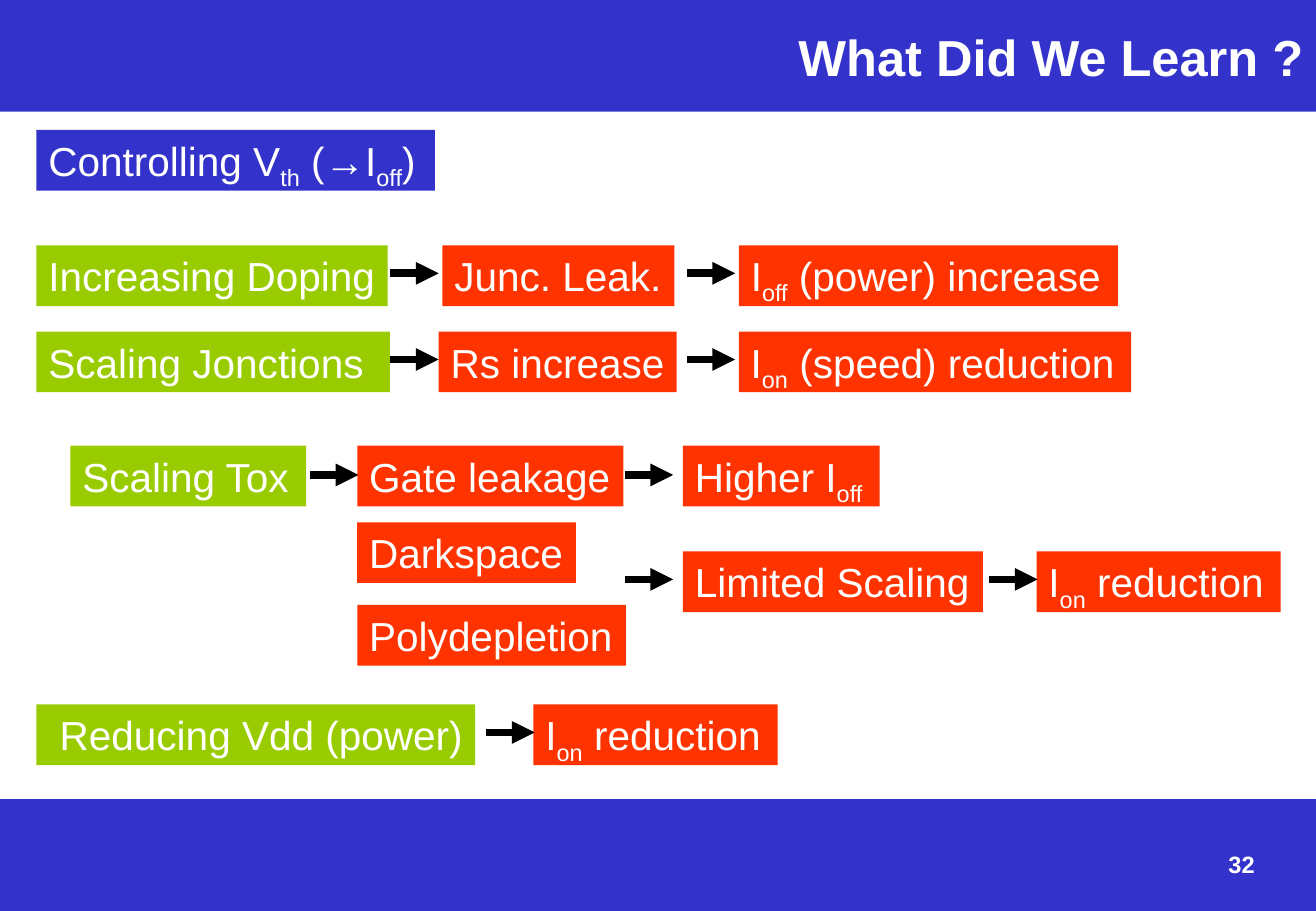
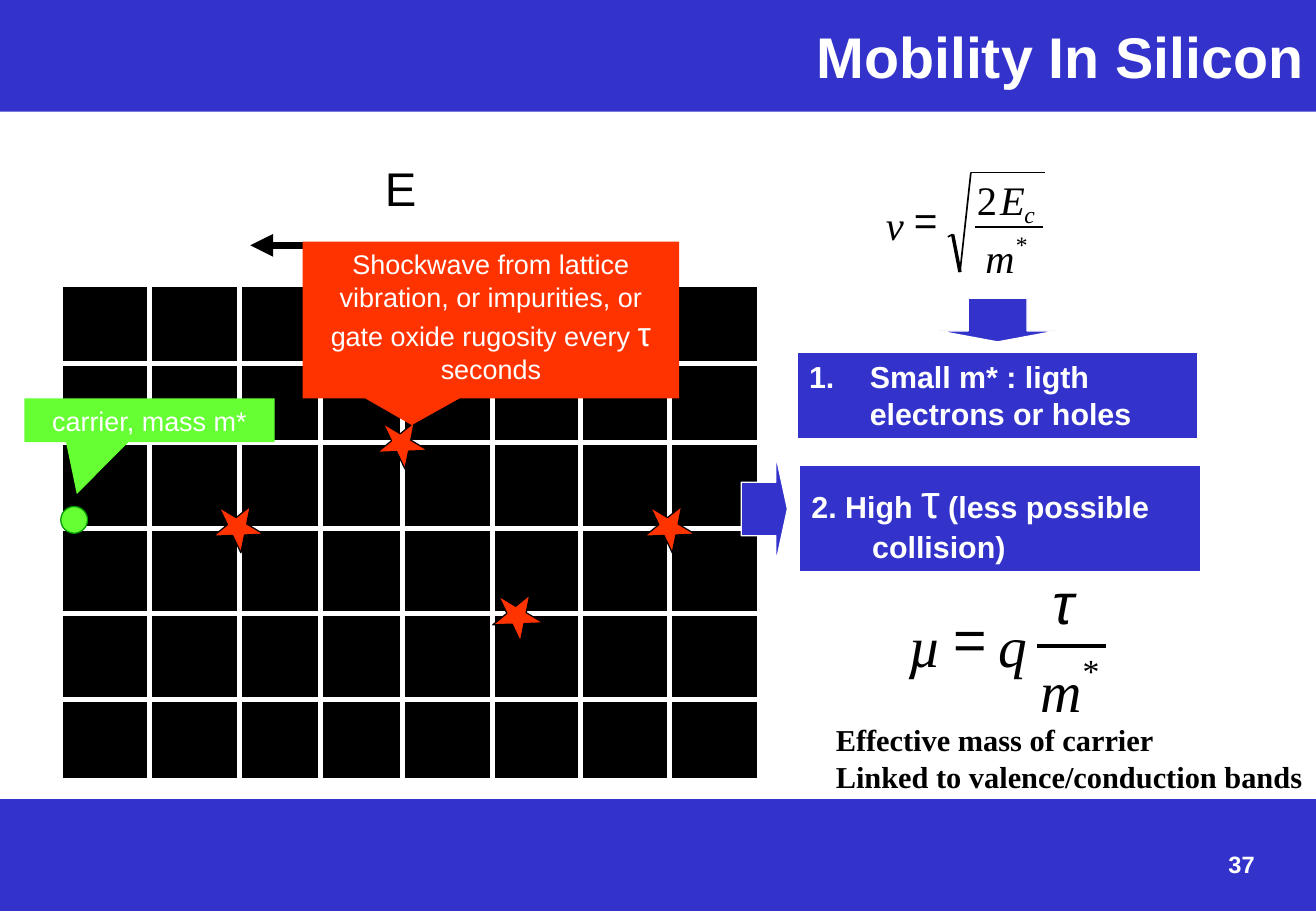
from pptx import Presentation
from pptx.dml.color import RGBColor
from pptx.enum.shapes import MSO_CONNECTOR, MSO_SHAPE
from pptx.enum.text import MSO_ANCHOR, MSO_AUTO_SIZE, PP_ALIGN
from pptx.oxml.ns import qn
from pptx.util import Emu, Pt
from lxml.etree import SubElement

PX = 9144  # 100 px to the inch
WIDE, HIGH, BAND = 1083, 750, 92
COLS = {
    "blue": "3333CC", "green": "99CC00", "red": "FF3300", "lime": "66FF33",
    "edge": "009900", "white": "FFFFFF", "black": "000000",
}
SANS, SERIF = "Arial", "Times New Roman"
PAD = (10, 5, 0, 5)
EVEN = (10, 5, 10, 5)


# Basic tools
def px(*nums):
    return [Emu(num * PX) for num in nums]


def tint(name):
    return RGBColor.from_string(COLS[name])


def add_run(par, text, size, color="white", face=SANS, bold=False,
            slant=False, sub=False):
    run = par.add_run()
    run.text = text
    font = run.font
    font.size, font.name, font.bold, font.italic = Pt(size), face, bold, slant
    font.color.rgb = tint(color)
    if sub:
        run._r.get_or_add_rPr().set("baseline", "-25000")


def set_frame(shape, pad=PAD, align=PP_ALIGN.LEFT, anchor=MSO_ANCHOR.TOP):
    """Set up a text frame and return its first paragraph."""
    frame = shape.text_frame
    frame.word_wrap = True
    frame.auto_size = MSO_AUTO_SIZE.NONE
    frame.vertical_anchor = anchor
    (frame.margin_left, frame.margin_top,
     frame.margin_right, frame.margin_bottom) = px(*pad)
    par = frame.paragraphs[0]
    par.alignment = align
    return par


# Kinds of element
def add_form(slide, kind, spot, fill, edge=None, width=0.75, turn=0, adj=()):
    form = slide.shapes.add_shape(kind, *px(*spot))
    form.shadow.inherit = False
    form.fill.solid()
    form.fill.fore_color.rgb = tint(fill)
    if edge:
        form.line.color.rgb = tint(edge)
        form.line.width = Pt(width)
    else:
        form.line.fill.background()
    form.rotation = turn
    for num, value in enumerate(adj):
        form.adjustments[num] = value
    return form


def add_line(slide, ends, color="black", width=4.5, head=False):
    line = slide.shapes.add_connector(MSO_CONNECTOR.STRAIGHT, *px(*ends))
    line.line.color.rgb = tint(color)
    line.line.width = Pt(width)
    if head:
        stroke = line.line._get_or_add_ln()
        SubElement(stroke, qn("a:tailEnd")).set("type", "triangle")
    SubElement(line._element.spPr, qn("a:effectLst"))


def add_box(slide, x, y, w, color, text):
    """Add a one-line box; text between underscores is set low."""
    box = add_form(slide, MSO_SHAPE.RECTANGLE, (x, y, w, 50), color)
    par = set_frame(box)
    for num, part in enumerate(text.split("_")):
        if part:
            add_run(par, part, 24, sub=num % 2 == 1)


def add_text(slide, spot, text, size, pad=PAD, **style):
    box = slide.shapes.add_textbox(*px(*spot))
    par = set_frame(box, pad)
    for num, row in enumerate(text.split("\n")):
        if num:
            par = box.text_frame.add_paragraph()
        add_run(par, row, size, **style)


def add_call(slide, spot, fill, adj, parts):
    call = add_form(slide, MSO_SHAPE.RECTANGULAR_CALLOUT, spot, fill, adj=adj)
    par = set_frame(call, EVEN, PP_ALIGN.CENTER)
    for text, size in parts:
        add_run(par, text, size)


def add_point(slide, spot, parts, count=False):
    """Add a boxed point with a hanging indent."""
    box = add_form(slide, MSO_SHAPE.RECTANGLE, spot, "blue", "white")
    par = set_frame(box, EVEN)
    props = par._p.get_or_add_pPr()
    props.set("marL", str(50 * PX))
    props.set("indent", str(-50 * PX))
    if count:
        SubElement(props, qn("a:buFont")).set("typeface", SANS)
        SubElement(props, qn("a:buAutoNum")).set("type", "arabicPeriod")
    for text, size, bold in parts:
        add_run(par, text, size, bold=bold)


def add_math(slide, signs, large, small):
    """Place single signs: x, y, width, sign, face, slant, is small."""
    for x, y, w, sign, face, slant, low in signs:
        size = small if low else large
        add_text(slide, (x, y, w, round(size * 1.67)), sign, size,
                 (0, 0, 0, 0), color="black", face=face, slant=slant)


# Title, bands and page number
def add_page(deck, title, size, page):
    slide = deck.slides.add_slide(deck.slide_layouts[5])
    add_form(slide, MSO_SHAPE.RECTANGLE, (0, HIGH - BAND, WIDE, BAND), "blue")
    add_text(slide, (1000, 695, 56, 34), page, 14, (11, 5, 0, 5), bold=True)
    head = slide.shapes.title
    head.left, head.top, head.width, head.height = px(0, 0, WIDE, BAND)
    head.fill.solid()
    head.fill.fore_color.rgb = tint("blue")
    par = set_frame(head, EVEN, PP_ALIGN.RIGHT, MSO_ANCHOR.MIDDLE)
    add_run(par, title, size, bold=True)
    return slide


# Slide of causes and effects
def add_learn(deck):
    slide = add_page(deck, "What Did We Learn ?", 30, "32")
    boxes = [
        (30, 107, 328, "blue", "Controlling V_th_ (→I_off_)"),
        (30, 202, 289, "green", "Increasing Doping"),
        (364, 202, 191, "red", "Junc. Leak."),
        (608, 202, 312, "red", "I_off_ (power) increase"),
        (30, 273, 291, "green", "Scaling Jonctions"),
        (361, 273, 196, "red", "Rs increase"),
        (608, 273, 323, "red", "I_on_ (speed) reduction"),
        (58, 367, 194, "green", "Scaling Tox"),
        (294, 367, 219, "red", "Gate leakage"),
        (562, 367, 162, "red", "Higher I_off_"),
        (294, 430, 180, "red", "Darkspace"),
        (294, 498, 221, "red", "Polydepletion"),
        (562, 454, 247, "red", "Limited Scaling"),
        (853, 454, 201, "red", "I_on_ reduction"),
        (30, 580, 361, "green", " Reducing Vdd (power)"),
        (439, 580, 201, "red", "I_on_ reduction"),
    ]
    for box in boxes:
        add_box(slide, *box)
    arrows = {225: (321, 565), 296: (321, 565), 391: (255, 514),
              477: (514, 814), 603: (400,)}
    for y, starts in arrows.items():
        for x in starts:
            add_line(slide, (x, y, x + 40, y), head=True)


# Slide of carriers in a lattice
def add_grid(slide):
    left, top, w, h = 50, 234, 575, 409
    add_form(slide, MSO_SHAPE.RECTANGLE, (left, top, w, h), "black", "white", 3)
    for y in (299, 364, 435, 505, 576):
        add_line(slide, (left, y, left + w, y), "white", 3)
    for x in (123, 197, 264, 331, 405, 478, 551):
        add_line(slide, (x, top, x, top + h), "white", 3)
    add_form(slide, MSO_SHAPE.OVAL, (50, 417, 22, 22), "lime", "edge")
    for x, y in ((175, 414), (310, 345), (405, 487), (530, 414)):
        add_form(slide, MSO_SHAPE.STAR_5_POINT, (x, y, 43, 37),
                 "red", "black", turn=31.1)


def add_speed(slide):
    root = [(780, 195), (784, 193), (790, 224), (799, 142), (860, 142)]
    for start, end, width in zip(root, root[1:], (1, 2, 1, 1)):
        add_line(slide, start + end, width=width)
    add_line(slide, (802, 187, 858, 187), width=1.5)
    add_math(slide, [
        (836, 189, 10, "*", SERIF, False, True),
        (804, 144, 17, "2", SERIF, False, False),
        (811, 192, 24, "m", SERIF, True, False),
        (823, 144, 20, "E", SERIF, True, False),
        (729, 165, 15, "v", SERIF, True, False),
        (843, 165, 9, "c", SERIF, True, True),
        (752, 161, 18, "=", SANS, False, False),
    ], 24, 14)


def add_drift(slide):
    add_line(slide, (853, 532, 910, 532), width=2.25)
    add_math(slide, [
        (891, 535, 14, "*", SERIF, False, True),
        (856, 539, 34, "m", SERIF, True, False),
        (822, 502, 24, "q", SERIF, True, False),
        (748, 502, 27, "µ", SERIF, True, False),
        (866, 467, 21, "τ", SANS, True, False),
        (785, 497, 26, "=", SANS, False, False),
    ], 34, 20)


def add_motion(deck):
    slide = add_page(deck, "Mobility In Silicon", 34, "37")
    add_grid(slide)
    # Field and callouts
    add_line(slide, (457, 202, 206, 202), head=True)
    add_text(slide, (307, 126, 46, 57), "E", 28, color="black")
    add_call(slide, (20, 328, 206, 36), "lime", (-0.29, 1.69),
             [("carrier, mass m*", 16)])
    add_call(slide, (249, 199, 310, 129), "red", (-0.21, 0.67), [
        ("Shockwave from lattice vibration, or impurities, or "
         "gate oxide rugosity every ", 16), ("τ", 20), (" seconds", 16)])
    # Formulas and points
    for spot, turn in (((803, 215, 36, 97), 90), ((610, 375, 38, 88), 0)):
        add_form(slide, MSO_SHAPE.RIGHT_ARROW, spot, "blue", "white",
                 turn=turn, adj=(0.5, 0.25))
    add_point(slide, (656, 290, 330, 71),
              [("Small m* : ligth electrons or holes", 18, True)], True)
    add_speed(slide)
    add_point(slide, (658, 383, 330, 88), [
        ("2. High ", 18, True), ("τ", 28, False),
        (" (less possible collision)", 18, True)])
    add_drift(slide)
    add_text(slide, (678, 589, 404, 71),
             "Effective mass of carrier\nLinked to valence/conduction bands",
             18, color="black", face=SERIF, bold=True)


def main():
    deck = Presentation()
    deck.slide_width, deck.slide_height = px(WIDE, HIGH)
    add_learn(deck)
    add_motion(deck)
    deck.save("out.pptx")


if __name__ == "__main__":
    main()
